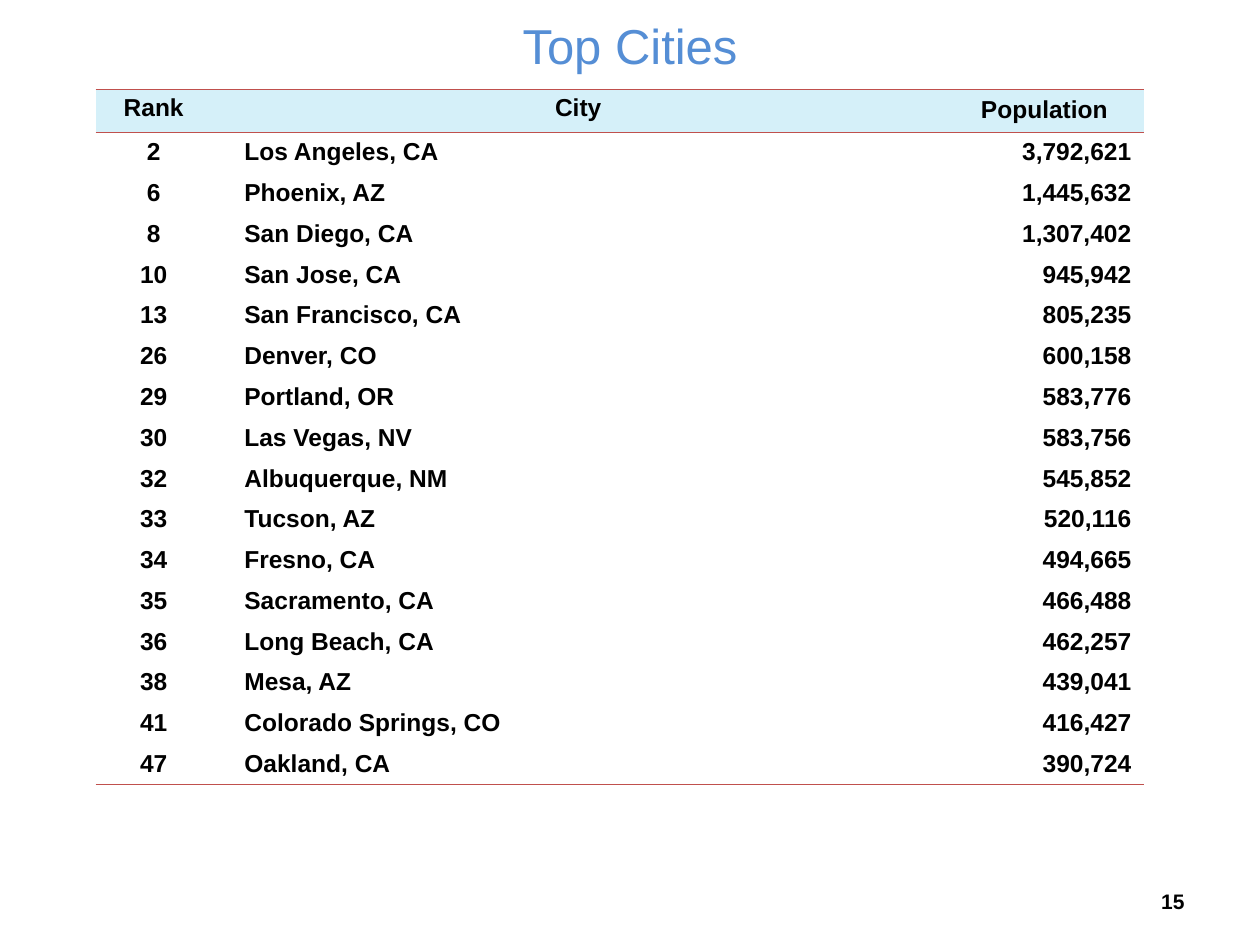
from lxml.etree import SubElement
from pptx import Presentation
from pptx.dml.color import RGBColor
from pptx.enum.text import MSO_ANCHOR, PP_ALIGN
from pptx.oxml.ns import qn
from pptx.util import Inches, Pt

TITLE_BLUE = RGBColor(0x55, 0x8E, 0xD5)
BLACK = RGBColor(0, 0, 0)
HEADER_FILL = RGBColor(0xD5, 0xF0, 0xF9)
RULE_RED = RGBColor(0xC0, 0x50, 0x4D)

HEADINGS = ("Rank", "City", "Population")
CITIES = [
    ("2", "Los Angeles, CA", "3,792,621"),
    ("6", "Phoenix, AZ", "1,445,632"),
    ("8", "San Diego, CA", "1,307,402"),
    ("10", "San Jose, CA", "945,942"),
    ("13", "San Francisco, CA", "805,235"),
    ("26", "Denver, CO", "600,158"),
    ("29", "Portland, OR", "583,776"),
    ("30", "Las Vegas, NV", "583,756"),
    ("32", "Albuquerque, NM", "545,852"),
    ("33", "Tucson, AZ", "520,116"),
    ("34", "Fresno, CA", "494,665"),
    ("35", "Sacramento, CA", "466,488"),
    ("36", "Long Beach, CA", "462,257"),
    ("38", "Mesa, AZ", "439,041"),
    ("41", "Colorado Springs, CO", "416,427"),
    ("47", "Oakland, CA", "390,724"),
]
COLUMN_WIDTHS = (0.92, 5.82, 1.58)
COLUMN_ALIGNMENTS = (PP_ALIGN.CENTER, PP_ALIGN.LEFT, PP_ALIGN.RIGHT)
HEADER_HEIGHT, ROW_HEIGHT = 0.34, 0.32


class SlideBuilder:
    """Hold the text style and the current slide, and add styled elements to it."""

    def __init__(self, slide):
        self.slide = slide
        self.style = {"name": "Arial", "size": Pt(14), "bold": True}

    def fill_text(self, frame, text, align, color=BLACK, **changes):
        paragraph = frame.paragraphs[0]
        paragraph.alignment = align
        run = paragraph.add_run()
        run.text = text
        for attribute, value in {**self.style, **changes}.items():
            setattr(run.font, attribute, value)
        run.font.color.rgb = color
        return paragraph

    def text(self, text, left, top, width, height, align, color=BLACK, **changes):
        box = self.slide.shapes.add_textbox(
            Inches(left), Inches(top), Inches(width), Inches(height))
        frame = box.text_frame
        frame.word_wrap = True
        frame.vertical_anchor = MSO_ANCHOR.MIDDLE
        self.fill_text(frame, text, align, color, **changes)

    def borders(self, cell, ruled_sides):
        properties = cell._tc.get_or_add_tcPr()
        for side in "LRTB":
            line = SubElement(properties, qn(f"a:ln{side}"), w=str(Pt(1)))
            if side in ruled_sides:
                fill = SubElement(line, qn("a:solidFill"))
                SubElement(fill, qn("a:srgbClr"), val=str(RULE_RED))
            else:
                SubElement(line, qn("a:noFill"))

    def table(self, left, top, headings, records):
        rows = [headings, *records]
        heights = [HEADER_HEIGHT] + [ROW_HEIGHT] * len(records)
        table = self.slide.shapes.add_table(
            len(rows), len(headings), Inches(left), Inches(top),
            Inches(sum(COLUMN_WIDTHS)), Inches(sum(heights))).table
        table.first_row = table.horz_banding = False
        for column, width in zip(table.columns, COLUMN_WIDTHS):
            column.width = Inches(width)
        for row_index, (values, height) in enumerate(zip(rows, heights)):
            table.rows[row_index].height = Inches(height)
            is_header = row_index == 0
            ruled_sides = {0: "TB", 1: "T", len(records): "B"}.get(row_index, "")
            for column_index, value in enumerate(values):
                cell = table.cell(row_index, column_index)
                cell.margin_top, cell.margin_bottom = Inches(0.05), Inches(0.04)
                self.borders(cell, ruled_sides)
                align = PP_ALIGN.CENTER if is_header else COLUMN_ALIGNMENTS[column_index]
                paragraph = self.fill_text(cell.text_frame, value, align)
                if is_header:
                    cell.fill.solid()
                    cell.fill.fore_color.rgb = HEADER_FILL
                    if value != "Population":
                        paragraph.line_spacing = 0.95
                else:
                    cell.fill.background()
                    if align == PP_ALIGN.LEFT:
                        cell.margin_left = Inches(0.26)


def main():
    deck = Presentation()
    deck.slide_width, deck.slide_height = Inches(10), Inches(7.5)
    builder = SlideBuilder(deck.slides.add_slide(deck.slide_layouts[6]))
    builder.text("Top Cities", 0, 0, 10, 0.71, PP_ALIGN.CENTER, TITLE_BLUE,
                 size=Pt(28), bold=False)
    builder.table(0.76, 0.71, HEADINGS, CITIES)
    builder.text("15", 7.17, 6.95, 2.33, 0.4, PP_ALIGN.RIGHT, size=Pt(12))
    deck.save("out.pptx")


if __name__ == "__main__":
    main()
